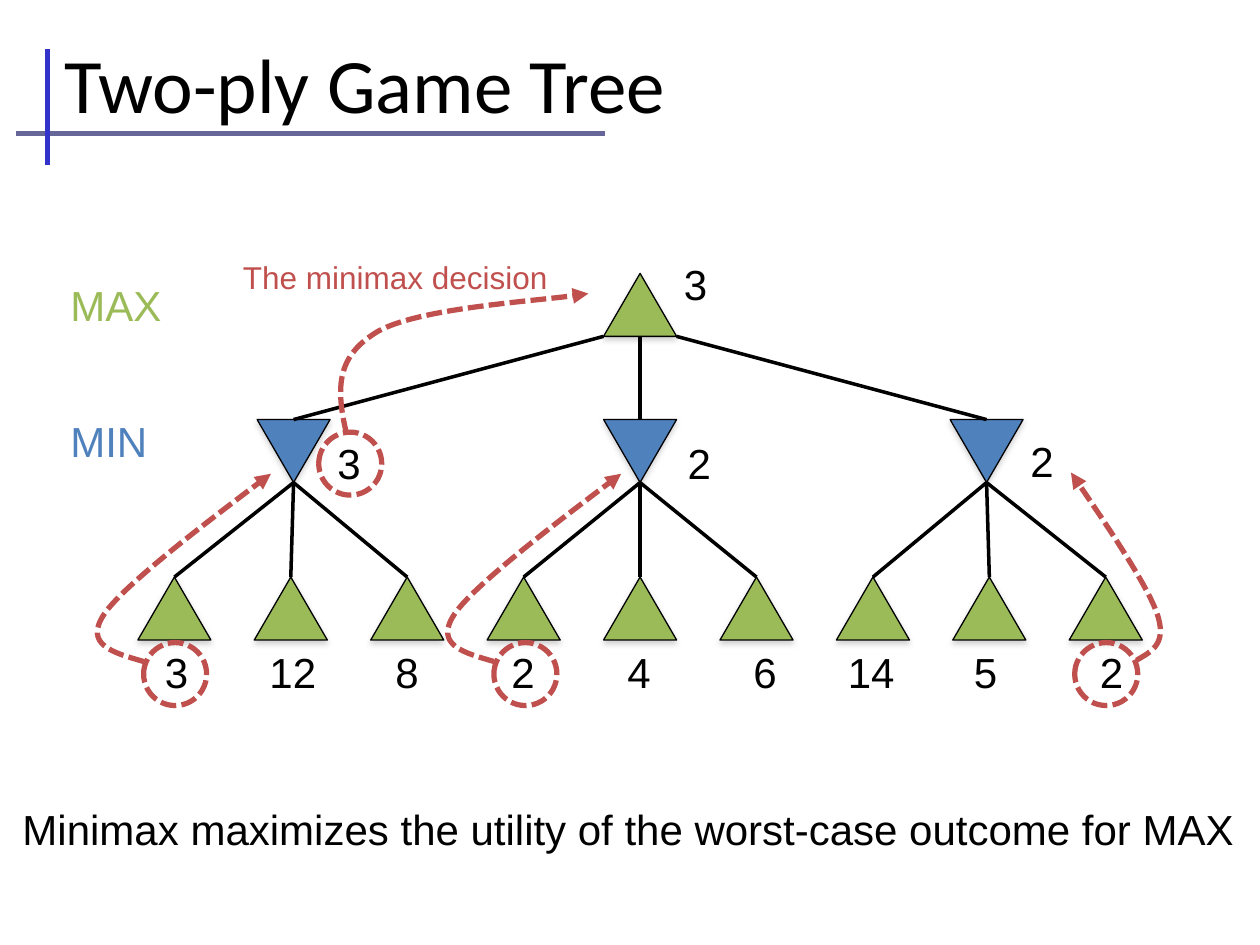
"""Build a slide showing a two-ply minimax game tree."""
import lxml.etree
import pptx
import pptx.dml.color
import pptx.enum.dml
import pptx.enum.shapes
import pptx.enum.text
import pptx.oxml.ns
import pptx.util

Inches = pptx.util.Inches
RGBColor = pptx.dml.color.RGBColor
SHAPE = pptx.enum.shapes.MSO_SHAPE
qn = pptx.oxml.ns.qn

BLACK = RGBColor(0x00, 0x00, 0x00)
GREEN = RGBColor(0x9B, 0xBB, 0x59)
BLUE = RGBColor(0x4F, 0x81, 0xBD)
RED = RGBColor(0xC0, 0x50, 0x4D)
SLATE = RGBColor(0x66, 0x66, 0x99)
INDIGO = RGBColor(0x33, 0x33, 0xCC)

NODE_WIDTH, NODE_HEIGHT = 0.58, 0.5
CENTER, MIN_GAP, LEAF_GAP = 5.08, 2.75, 0.924
ROOT_TOP, MIN_TOP, LEAF_TOP = 2.17, 3.33, 4.58
LEAF_LABELS = [("3", 1.21), ("12", 2.04), ("8", 3.04), ("2", 3.96), ("4", 4.88),
               ("6", 5.88), ("14", 6.63), ("5", 7.63), ("2", 8.63)]
BACKUP_CURVE = [(1.14, 5.25), (0.9, 5.18), (0.66, 5.12), (0.83, 4.87),
                (1, 4.62), (2.15, 3.76), (2.15, 3.76)]
RIGHT_CURVE = [(9.02, 5.24), (9.14, 5.17), (9.27, 5.11), (9.18, 4.86),
               (9.09, 4.61), (8.5, 3.75), (8.5, 3.75)]
DECISION_CURVE = [(2.75, 3.44), (2.66, 3.06), (2.68, 2.82), (3, 2.63),
                  (3.32, 2.45), (4.39, 2.38), (4.67, 2.33)]


class TreeSlide:
    def __init__(self, slide, font="Arial", size=24):
        self.shapes = slide.shapes
        self.font = font
        self.size = size

    def text(self, text, left, top, width, height=0.5, color=BLACK, size=None,
             font=None, anchor=pptx.enum.text.MSO_ANCHOR.TOP, wrap=False):
        shape = self.shapes.add_textbox(*map(Inches, (left, top, width, height)))
        frame = shape.text_frame
        frame.word_wrap = wrap
        frame.vertical_anchor = anchor
        paragraph = frame.paragraphs[0]
        paragraph.text = text
        paragraph.font.name = font or self.font
        paragraph.font.size = pptx.util.Pt(size or self.size)
        paragraph.font.color.rgb = color

    def value(self, text, left, top):
        self.text(text, left, top, 0.2 + 0.19 * len(text))

    def node(self, center, top, color, flipped=False):
        shape = self.shapes.add_shape(
            SHAPE.ISOSCELES_TRIANGLE,
            *map(Inches, (center - NODE_WIDTH / 2, top, NODE_WIDTH, NODE_HEIGHT)))
        shape.fill.solid()
        shape.fill.fore_color.rgb = color
        shape.line.color.rgb = BLACK
        shape.line.width = pptx.util.Pt(0.75)
        properties = shape.element.spPr
        if flipped:
            properties.get_or_add_xfrm().set("flipV", "1")
        shape.shadow.inherit = False
        shadow = lxml.etree.SubElement(
            properties.find(qn("a:effectLst")), qn("a:outerShdw"),
            blurRad="40000", dist="23000", dir="5400000", rotWithShape="0")
        tint = lxml.etree.SubElement(shadow, qn("a:srgbClr"), val="808080")
        lxml.etree.SubElement(tint, qn("a:alpha"), val="35000")

    def line(self, start, end, color=BLACK, width=2):
        connector = self.shapes.add_connector(
            pptx.enum.shapes.MSO_CONNECTOR.STRAIGHT, *map(Inches, (*start, *end)))
        connector.line.color.rgb = color
        connector.line.width = pptx.util.Pt(width)
        lxml.etree.SubElement(connector._element.spPr, qn("a:effectLst"))

    def dashed(self, shape):
        shape.fill.background()
        shape.line.color.rgb = RED
        shape.line.width = pptx.util.Pt(3)
        shape.line.dash_style = pptx.enum.dml.MSO_LINE.SQUARE_DOT
        shape.line._ln.find(qn("a:prstDash")).set("val", "sysDash")
        shape.shadow.inherit = False

    def circle(self, left, top):
        self.dashed(self.shapes.add_shape(
            SHAPE.OVAL, *map(Inches, (left, top, 0.5, 0.5))))

    def curved_arrow(self, points, shift=0):
        start, *rest = [(Inches(x + shift), Inches(y)) for x, y in points]
        builder = self.shapes.build_freeform(*start)
        builder.add_line_segments(rest, close=False)
        shape = builder.convert_to_shape()
        outline = shape.element.find(".//" + qn("a:path"))
        segments = outline.findall(qn("a:lnTo"))
        for first in range(0, len(segments), 3):
            curve = lxml.etree.SubElement(outline, qn("a:cubicBezTo"))
            for segment in segments[first:first + 3]:
                curve.append(segment[0])
                outline.remove(segment)
        self.dashed(shape)
        lxml.etree.SubElement(shape.line._ln, qn("a:tailEnd"), type="triangle")


def main():
    presentation = pptx.Presentation()
    presentation.slide_width = Inches(10)
    presentation.slide_height = Inches(7.5)
    tree = TreeSlide(presentation.slides.add_slide(presentation.slide_layouts[6]))

    tree.line((0.13, 1.06), (4.8, 1.06), SLATE, 3)
    tree.line((0.38, 1.31), (0.38, 0.39), INDIGO, 3)
    tree.text("Two-ply Game Tree", 0.41, 0.1, 8.92, 1.12, size=44, font="Calibri",
              anchor=pptx.enum.text.MSO_ANCHOR.MIDDLE, wrap=True)

    min_centers = [CENTER + MIN_GAP * step for step in (-1, 0, 1)]
    leaf_centers = [CENTER + LEAF_GAP * step for step in range(-4, 5)]
    tree.node(CENTER, ROOT_TOP, GREEN)
    for center in min_centers:
        tree.node(center, MIN_TOP, BLUE, flipped=True)
    for center in leaf_centers:
        tree.node(center, LEAF_TOP, GREEN)
    for index, center in enumerate(min_centers):
        corner = CENTER + (index - 1) * NODE_WIDTH / 2
        tree.line((corner, ROOT_TOP + NODE_HEIGHT), (center, MIN_TOP))
        for leaf in leaf_centers[3 * index:3 * index + 3]:
            tree.line((center, MIN_TOP + NODE_HEIGHT), (leaf, LEAF_TOP))

    tree.text("MIN", 0.46, 3.25, 0.82, color=BLUE)
    tree.text("MAX", 0.46, 2.17, 0.93, color=GREEN)
    for label, left in LEAF_LABELS:
        tree.value(label, left, 5.08)
    for label, left, top in [("3", 2.58, 3.42), ("2", 5.36, 3.42),
                             ("2", 8.08, 3.41), ("3", 5.33, 2)]:
        tree.value(label, left, top)

    for left, top in [(1.14, 5.1), (3.92, 5.1), (8.53, 5.1), (2.53, 3.43)]:
        tree.circle(left, top)
    tree.curved_arrow(BACKUP_CURVE)
    tree.curved_arrow(BACKUP_CURVE, shift=2.78)
    tree.curved_arrow(RIGHT_CURVE)
    tree.curved_arrow(DECISION_CURVE)

    tree.text("The minimax decision", 1.83, 2, 2.64, 0.4, RED, 18)
    tree.text("Minimax maximizes the utility of the worst-case outcome for MAX",
              0.08, 6.33, 9.91)
    presentation.save("out.pptx")


if __name__ == "__main__":
    main()
